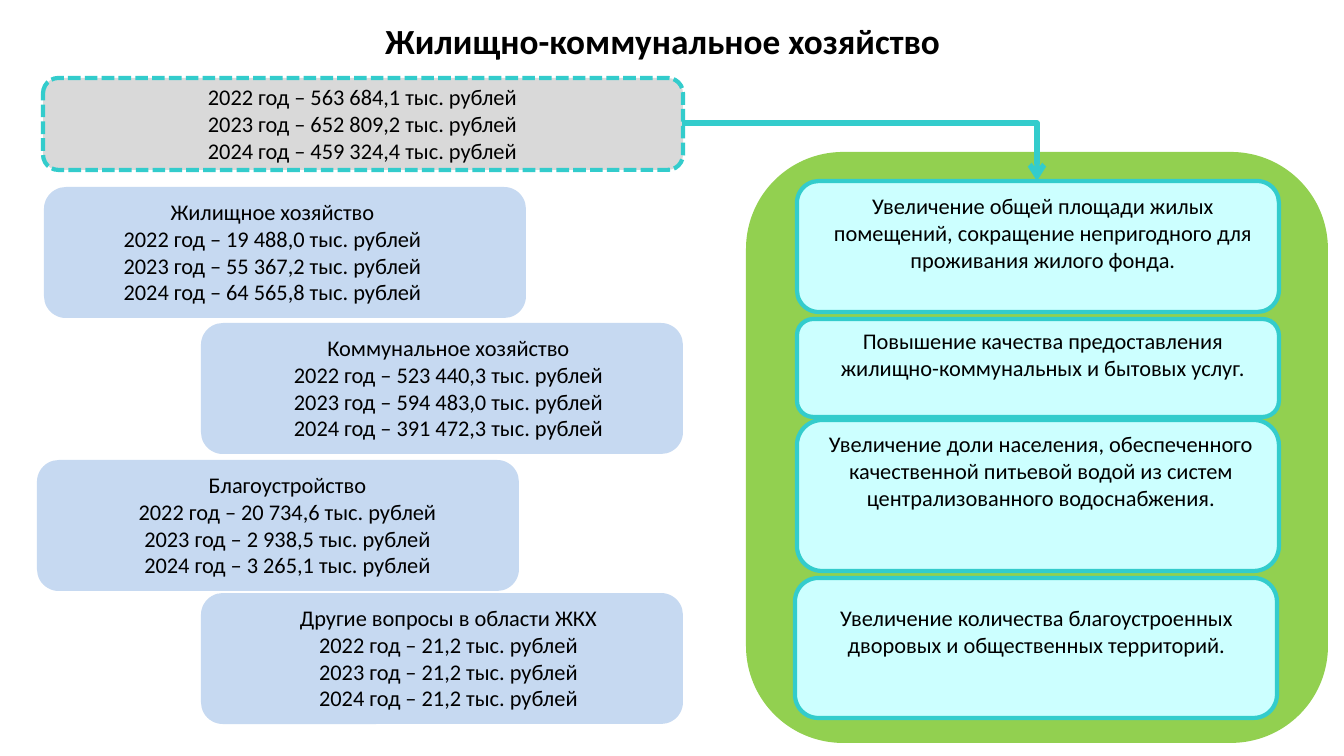
"""Builds a slide on housing and utilities spending and the goals it serves."""
import dataclasses

import lxml.etree
import pptx
import pptx.dml.color
import pptx.enum.dml
import pptx.enum.shapes
import pptx.enum.text
import pptx.oxml.ns
import pptx.util

EMU_PER_PX = 914400 / 100.8
SLIDE_SIZE = (1344, 756)
YEARS = (2022, 2023, 2024)
TOTALS = ("563 684,1", "652 809,2", "459 324,4")
SECTOR_SIZE = (482, 131)
SECTOR_TEXT_SIZE = (487, 119)
SECTOR_TEXT_DROP = 6
GOAL_WIDTH = 482

SECTORS = (
    ("Жилищное хозяйство", (44, 187), -15, ("19 488,0", "55 367,2", "64 565,8")),
    ("Коммунальное хозяйство", (201, 323), 4, ("523 440,3", "594 483,0", "391 472,3")),
    ("Благоустройство", (37, 460), 7, ("20 734,6", "2 938,5", "3 265,1")),
    ("Другие вопросы в области ЖКХ", (201, 593), 4, ("21,2", "21,2", "21,2")),
)

GOALS = (
    ("Увеличение общей площади жилых помещений, сокращение непригодного "
     "для проживания жилого фонда.", (797, 181), 131, (807, 187, 472, 92)),
    ("Повышение качества предоставления жилищно-коммунальных и бытовых услуг.",
     (797, 319), 98, (807, 322, 472, 64)),
    ("Увеличение доли населения, обеспеченного качественной питьевой водой "
     "из систем централизованного водоснабжения.",
     (797, 420), 151, (805, 425, 472, 92)),
    ("Увеличение количества благоустроенных дворовых и общественных территорий.",
     (795, 578), 140, (815, 599, 443, 64)),
)


@dataclasses.dataclass(frozen=True)
class Theme:
    """Colours, font and type sizes of the slide."""
    text: str = "000000"
    total: str = "D9D9D9"
    sector: str = "C6D9F1"
    goals_panel: str = "92D050"
    goal: str = "CCFFFF"
    accent: str = "33CCCC"
    font: str = "Calibri"
    title_size: float = 25.2
    body_size: float = 16
    outline_width: float = 3
    arrow_width: float = 3.75


THEME = Theme()


def px(length):
    """Turns pixels into EMU."""
    return pptx.util.Emu(round(length * EMU_PER_PX))


def rgb(colour):
    """Turns a hex string into a colour."""
    return pptx.dml.color.RGBColor.from_string(colour)


def add_card(slide, box, fill, outline=None, dash=None):
    """Adds a rounded card with an optional outline."""
    card = slide.shapes.add_shape(
        pptx.enum.shapes.MSO_SHAPE.ROUNDED_RECTANGLE, *map(px, box))
    card.shadow.inherit = False
    card.fill.solid()
    card.fill.fore_color.rgb = rgb(fill)
    if outline is None:
        card.line.fill.background()
        return
    card.line.color.rgb = rgb(outline)
    card.line.width = pptx.util.Pt(THEME.outline_width)
    if dash is not None:
        card.line.dash_style = dash


def add_label(slide, box, lines, size=THEME.body_size, bold=False,
              anchor=pptx.enum.text.MSO_ANCHOR.TOP):
    """Adds centred text with one paragraph per line."""
    frame = slide.shapes.add_textbox(*map(px, box)).text_frame
    frame.word_wrap = True
    frame.vertical_anchor = anchor
    frame.text = "\n".join(lines)
    for paragraph in frame.paragraphs:
        paragraph.alignment = pptx.enum.text.PP_ALIGN.CENTER
        paragraph.font.name = THEME.font
        paragraph.font.size = pptx.util.Pt(size)
        paragraph.font.bold = bold
        paragraph.font.color.rgb = rgb(THEME.text)


def add_bent_arrow(slide, start, end):
    """Adds an arrow that runs across and then down."""
    arrow = slide.shapes.add_connector(
        pptx.enum.shapes.MSO_CONNECTOR.ELBOW, *map(px, start + end))
    arrow.line.color.rgb = rgb(THEME.accent)
    arrow.line.width = pptx.util.Pt(THEME.arrow_width)
    qn = pptx.oxml.ns.qn
    properties = arrow.element.spPr
    properties.find(qn("a:prstGeom")).set("prst", "bentConnector2")
    lxml.etree.SubElement(properties.find(qn("a:ln")), qn("a:tailEnd"), type="arrow")
    lxml.etree.SubElement(properties, qn("a:effectLst"))


def yearly_lines(amounts):
    """Words the amount for each year."""
    return [f"{year} год – {amount} тыс. рублей"
            for year, amount in zip(YEARS, amounts)]


def add_sector(slide, name, corner, text_shift, amounts):
    """Adds one spending sector with its yearly amounts."""
    left, top = corner
    add_card(slide, (*corner, *SECTOR_SIZE), THEME.sector)
    add_label(slide, (left + text_shift, top + SECTOR_TEXT_DROP, *SECTOR_TEXT_SIZE),
              [name, *yearly_lines(amounts)])


def add_goal(slide, wording, corner, height, text_box):
    """Adds one goal card."""
    add_card(slide, (*corner, GOAL_WIDTH, height), THEME.goal, THEME.accent)
    add_label(slide, text_box, [wording])


def main():
    """Builds and saves the slide."""
    presentation = pptx.Presentation()
    presentation.slide_width, presentation.slide_height = map(px, SLIDE_SIZE)
    slide = presentation.slides.add_slide(presentation.slide_layouts[6])

    add_label(slide, (58, 13, 1210, 55), ["Жилищно-коммунальное хозяйство"],
              THEME.title_size, True, pptx.enum.text.MSO_ANCHOR.MIDDLE)
    add_card(slide, (43, 78, 640, 92), THEME.total, THEME.accent,
             pptx.enum.dml.MSO_LINE.SQUARE_DOT)
    add_label(slide, (113, 78, 499, 92), yearly_lines(TOTALS))
    for sector in SECTORS:
        add_sector(slide, *sector)

    add_card(slide, (746, 152, 582, 591), THEME.goals_panel)
    for goal in GOALS:
        add_goal(slide, *goal)
    add_bent_arrow(slide, (682, 123), (1037, 181))

    presentation.save("out.pptx")


if __name__ == "__main__":
    main()
